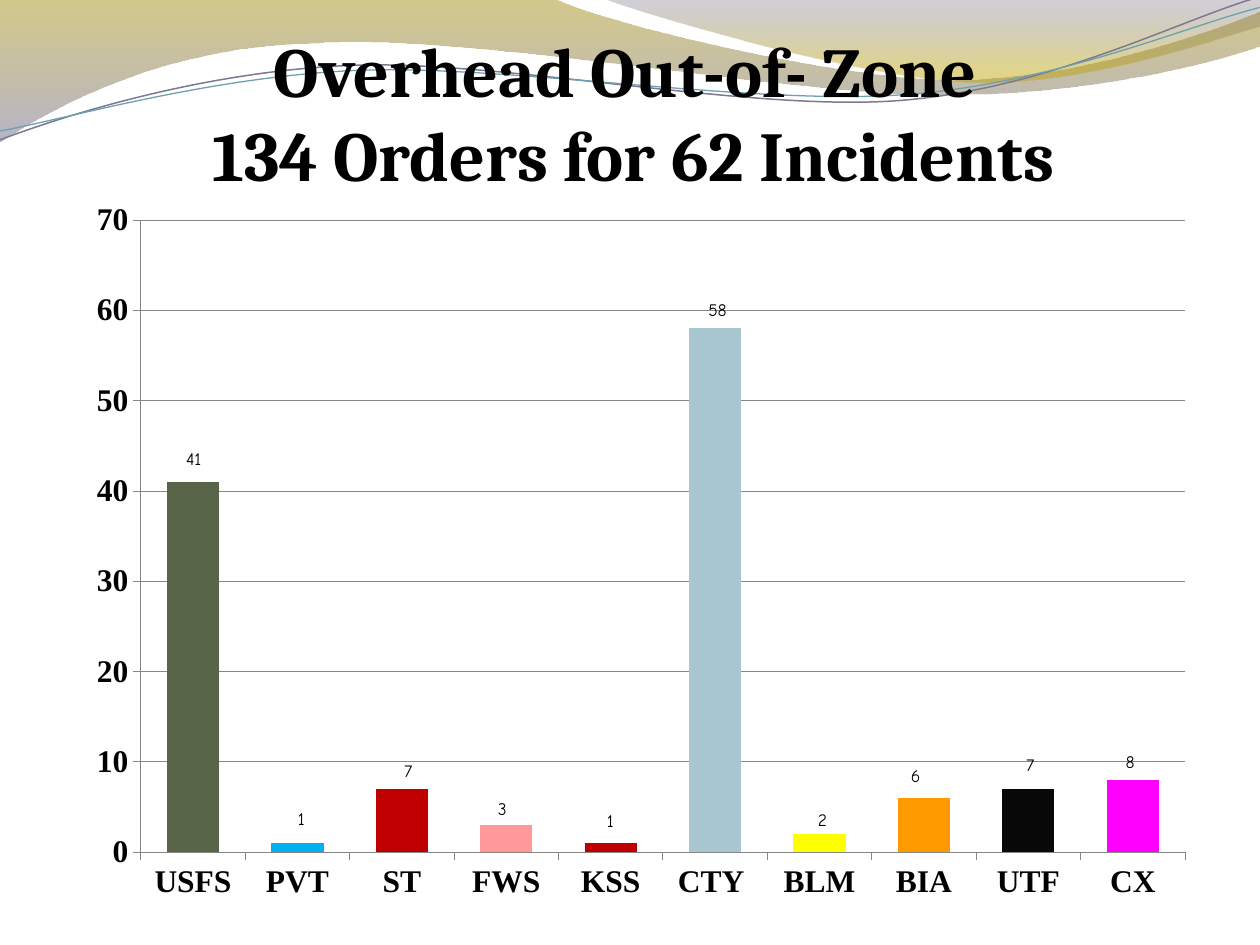
from typing import NamedTuple

from lxml.etree import SubElement
from pptx import Presentation
from pptx.chart.data import CategoryChartData
from pptx.dml.color import RGBColor
from pptx.enum.chart import XL_CHART_TYPE, XL_LABEL_POSITION, XL_TICK_MARK
from pptx.enum.text import MSO_AUTO_SIZE, PP_ALIGN
from pptx.oxml import parse_xml
from pptx.oxml.ns import nsdecls, qn
from pptx.util import Cm, Pt

BLACK = RGBColor(0x00, 0x00, 0x00)
GRAY = RGBColor(0x87, 0x87, 0x87)
OUTLINE = RGBColor(0x4D, 0x4D, 0x4D)
OLIVE = RGBColor(0x9E, 0x87, 0x00)
GOLD = RGBColor(0xBD, 0xA1, 0x00)
MAUVE = RGBColor(0x7B, 0x76, 0x9C)
PLUM = RGBColor(0x66, 0x62, 0x7C)
VIOLET = RGBColor(0x7C, 0x79, 0x91)
TEAL = RGBColor(0x6E, 0xA0, 0xB0)
GREEN = RGBColor(0x57, 0x64, 0x48)
BLUE = RGBColor(0x00, 0xB0, 0xF0)
RED = RGBColor(0xC0, 0x00, 0x00)
PINK = RGBColor(0xFF, 0x99, 0x99)
PALE_BLUE = RGBColor(0xA8, 0xC6, 0xD0)
YELLOW = RGBColor(0xFF, 0xFF, 0x00)
ORANGE = RGBColor(0xFF, 0x99, 0x00)
INK = RGBColor(0x08, 0x08, 0x08)
MAGENTA = RGBColor(0xFF, 0x00, 0xFF)

CHART_WIDTH, CHART_HEIGHT = Cm(22.86), Cm(14.6)
Point = tuple[float, float]


class Stop(NamedTuple):
    position: int
    color: RGBColor
    opacity: int


class Band(NamedTuple):
    start: Point
    segments: list[tuple[Point, ...]]
    stops: list[Stop]


class Wave(NamedTuple):
    start: Point
    segments: list[tuple[Point, ...]]
    color: RGBColor
    width: float


class Bar(NamedTuple):
    category: str
    value: int
    label: str
    color: RGBColor
    shift: tuple[int, int]


BANDS = [
    Band((0, 0), [
        ((11.18, -0.03),),
        ((12.09, 0.43), (16.87, 1.6), (19.25, 1.6)),
        ((21.67, 1.6), (24.33, 0.66), (25.4, 0.23)),
        ((25.43, 0.91),),
        ((24.97, 1.12), (22.1, 1.93), (18.95, 1.91)),
        ((15.8, 1.91), (9.7, 0.71), (6.53, 0.86)),
        ((3.28, 0.91), (1.17, 2.11), (-0.03, 2.87)),
        ((0, 0),),
    ], [Stop(0, OLIVE, 45), Stop(100, MAUVE, 55)]),
    Band((12.17, -0.03), [
        ((12.93, 0.28), (17.32, 1.57), (19.53, 1.65)),
        ((21.74, 1.75), (24.41, 0.81), (25.4, 0.53)),
        ((25.4, 0),),
        ((12.17, -0.03),),
    ], [Stop(0, PLUM, 30), Stop(80, GOLD, 45)]),
]

WAVES = [
    Wave((0, 2.82), [
        ((1.22, 2.36), (4.01, 1.45), (7.04, 1.32)),
        ((10.03, 1.19), (15.06, 2.26), (18.11, 2.03)),
        ((21.16, 1.8), (23.83, 0.38), (25.35, -0.05)),
    ], VIOLET, 0.85),
    Wave((0, 2.64), [
        ((1.19, 2.44), (4.17, 1.55), (7.19, 1.42)),
        ((10.24, 1.3), (15.16, 2.13), (18.21, 1.91)),
        ((21.23, 1.7), (23.9, 0.53), (25.4, 0.15)),
    ], TEAL, 0.75),
]

BARS = [
    Bar("USFS", 41, "41 ", GREEN, (3, -10)),
    Bar("PVT", 1, " 1", BLUE, (1, -12)),
    Bar("ST", 7, " 7", RED, (3, -3)),
    Bar("FWS", 3, " 3", PINK, (-6, -1)),
    Bar("KSS", 1, " 1", RED, (-3, -9)),
    Bar("CTY ", 58, "58", PALE_BLUE, (2, -4)),
    Bar("BLM", 2, " 2", YELLOW, (0, 2)),
    Bar("BIA", 6, " 6", ORANGE, (-10, -9)),
    Bar("UTF", 7, "7 ", INK, (4, -12)),
    Bar("CX", 8, " 8", MAGENTA, (-5, -4)),
]


def draw_outline(slide, start: Point, segments: list[tuple[Point, ...]], closed: bool):
    """Draw straight and cubic segments as one freeform."""
    builder = slide.shapes.build_freeform(Cm(start[0]), Cm(start[1]))
    points = [(Cm(x), Cm(y)) for segment in segments for x, y in segment]
    builder.add_line_segments(points, close=closed)
    shape = builder.convert_to_shape()
    shape.shadow.inherit = False
    lines = iter(list(shape.element.iter(qn("a:lnTo"))))
    for segment in segments:
        first, *others = [next(lines) for _ in segment]
        if others:
            first.tag = qn("a:cubicBezTo")
            for line in others:
                first.append(line[0])
                line.getparent().remove(line)
    return shape


def draw_band(slide, band: Band) -> None:
    """Draw a band with a translucent vertical gradient."""
    shape = draw_outline(slide, band.start, band.segments, True)
    shape.line.fill.background()
    stops = "".join(
        f'<a:gs pos="{stop.position * 1000}"><a:srgbClr val="{stop.color}">'
        f'<a:alpha val="{stop.opacity * 1000}"/></a:srgbClr></a:gs>' for stop in band.stops)
    gradient = parse_xml(f'<a:gradFill {nsdecls("a")} rotWithShape="1"><a:gsLst>{stops}</a:gsLst>'
                         '<a:lin ang="5400000" scaled="0"/></a:gradFill>')
    shape.element.spPr.find(qn("a:custGeom")).addnext(gradient)


def draw_wave(slide, wave: Wave) -> None:
    """Draw a thin open curve."""
    shape = draw_outline(slide, wave.start, wave.segments, False)
    shape.fill.background()
    shape.line.color.rgb = wave.color
    shape.line.width = Pt(wave.width)


def manual_layout(**values: float):
    """Return a chart layout with the given settings."""
    modes = '<c:layoutTarget val="inner"/><c:xMode val="edge"/><c:yMode val="edge"/>'
    settings = "".join(f'<c:{name} val="{value}"/>' for name, value in values.items())
    return parse_xml(f'<c:layout {nsdecls("c")}><c:manualLayout>{modes if "w" in values else ""}'
                     f'{settings}</c:manualLayout></c:layout>')


def style_font(font, size: float, name: str, bold: bool) -> None:
    """Set a black font."""
    font.size, font.name, font.bold = Pt(size), name, bold
    font.color.rgb = BLACK


def style_line(line) -> None:
    """Set a thin gray line."""
    line.color.rgb = GRAY
    line.width = Pt(0.5)


def draw_bar(series, index: int, bar: Bar) -> None:
    """Colour one column and place its label."""
    fill = series.points[index].format.fill
    fill.solid()
    fill.fore_color.rgb = bar.color
    label = series.points[index].data_label
    label.text_frame.text = bar.label
    style_font(label.text_frame.paragraphs[0].runs[0].font, 10, "Comic Neue", False)
    label.position = XL_LABEL_POSITION.OUTSIDE_END
    element = series.data_labels._element.findall(qn("c:dLbl"))[index]
    element.find(qn("c:idx")).addnext(
        manual_layout(x=bar.shift[0] / 1000, y=bar.shift[1] / 1000))


def draw_chart(slide, bars: list[Bar]) -> None:
    """Draw the column chart of orders."""
    data = CategoryChartData()
    data.categories = [bar.category for bar in bars]
    data.add_series("Series 1", [bar.value for bar in bars])
    chart = slide.shapes.add_chart(XL_CHART_TYPE.COLUMN_CLUSTERED, Cm(1.47), Cm(3.81),
                                   CHART_WIDTH, CHART_HEIGHT, data).chart
    chart.has_legend = chart.has_title = False
    style_font(chart.font, 18, "Cambria", False)
    for axis in (chart.category_axis, chart.value_axis):
        axis.major_tick_mark = XL_TICK_MARK.OUTSIDE
        style_line(axis.format.line)
        style_font(axis.tick_labels.font, 18, "Times New Roman", True)
    chart.value_axis.minimum_scale, chart.value_axis.maximum_scale = 0, 70
    chart.value_axis.major_unit = 10
    style_line(chart.value_axis.major_gridlines.format.line)
    plot = chart.plots[0]
    plot.gap_width, plot.vary_by_categories = 100, False
    series = plot.series[0]
    series.format.fill.solid()
    series.format.fill.fore_color.rgb = TEAL
    labels = series.data_labels
    labels.show_value = True
    style_font(labels.font, 10, "Comic Neue", False)
    for index, bar in enumerate(bars):
        draw_bar(series, index, bar)
    for leader in labels._element.findall(qn("c:showLeaderLines")):
        leader.set("val", "0")
    area = chart._chartSpace.chart.plotArea
    for layout in area.findall(qn("c:layout")):
        area.remove(layout)
    area.insert(0, manual_layout(x=Cm(1.37) / CHART_WIDTH, y=Cm(0.63) / CHART_HEIGHT,
                                 w=Cm(21.05) / CHART_WIDTH, h=Cm(12.74) / CHART_HEIGHT))


def draw_title(slide, lines: list[str]) -> None:
    """Write the centred title."""
    text_frame = slide.shapes.add_textbox(Cm(3.66), Cm(0.43), Cm(18.21), Cm(3.68)).text_frame
    text_frame.word_wrap = False
    text_frame.auto_size = MSO_AUTO_SIZE.SHAPE_TO_FIT_TEXT
    text_frame.text = "\n".join(lines)
    for paragraph in text_frame.paragraphs:
        paragraph.alignment = PP_ALIGN.CENTER
        font = paragraph.runs[0].font
        style_font(font, 40, "Cambria", True)
        outline = SubElement(font._element, qn("a:ln"), w=str(Pt(0.9)))
        SubElement(SubElement(outline, qn("a:solidFill")), qn("a:srgbClr"), val=str(OUTLINE))
        font._element.insert(0, outline)


def main() -> None:
    """Build and save the slide."""
    presentation = Presentation()
    presentation.slide_width, presentation.slide_height = Cm(25.4), Cm(19.05)
    slide = presentation.slides.add_slide(presentation.slide_layouts[6])
    for band in BANDS:
        draw_band(slide, band)
    for wave in WAVES:
        draw_wave(slide, wave)
    draw_chart(slide, BARS)
    draw_title(slide, ["Overhead Out-of- Zone ", "134 Orders for 62 Incidents"])
    presentation.save("out.pptx")


if __name__ == "__main__":
    main()
